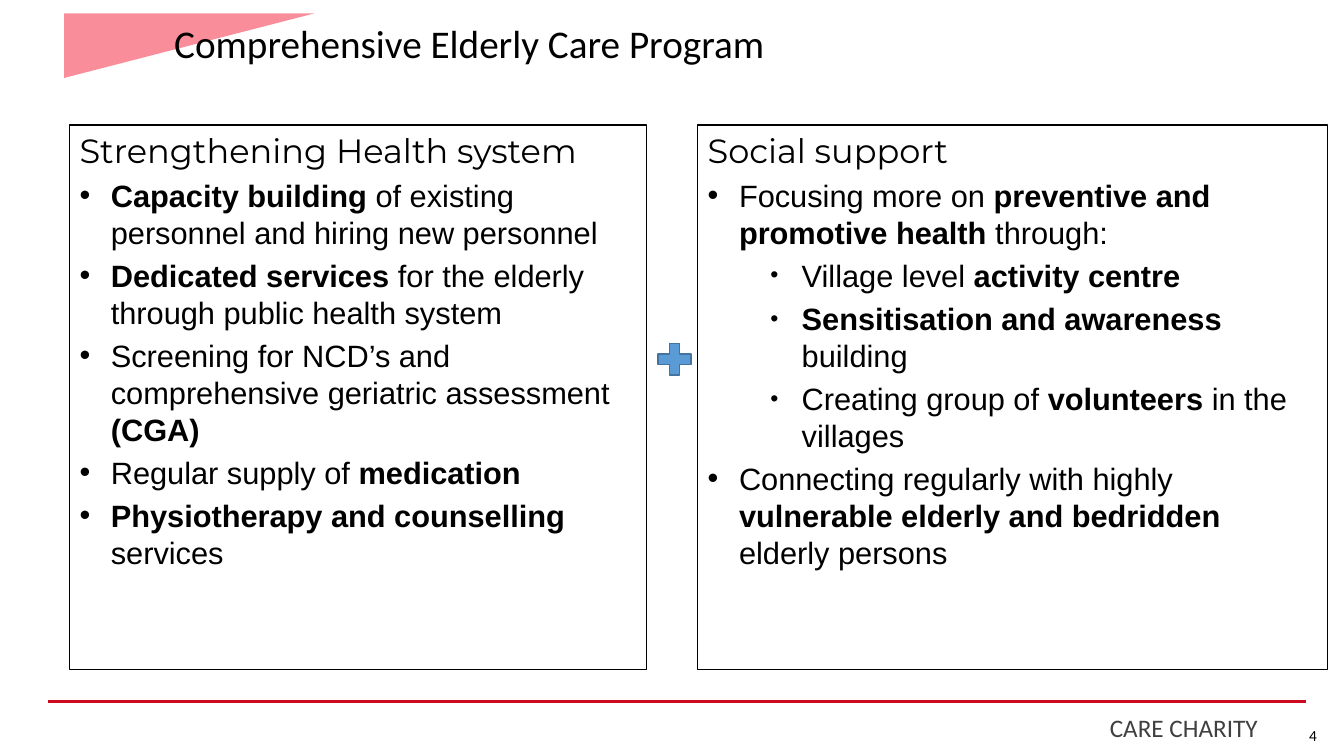
from dataclasses import dataclass

from lxml.etree import SubElement
from pptx import Presentation
from pptx.dml.color import RGBColor
from pptx.enum.shapes import MSO_CONNECTOR, MSO_SHAPE
from pptx.enum.text import MSO_ANCHOR, MSO_AUTO_SIZE, PP_ALIGN
from pptx.oxml.ns import qn
from pptx.util import Cm, Pt

BLACK = RGBColor(0x00, 0x00, 0x00)
GREY = RGBColor(0x40, 0x40, 0x40)
PINK = RGBColor(0xF9, 0x8E, 0x9A)
RED = RGBColor(0xCC, 0x0A, 0x20)
BLUE = RGBColor(0x5B, 0x9B, 0xD5)
NAVY = RGBColor(0x43, 0x73, 0x9E)
HANG = 0.79


@dataclass
class Item:
    text: str  # parts between asterisks are bold
    level: int = 0


@dataclass
class Panel:
    left: float
    width: float
    head: str
    items: list[Item]


@dataclass
class Label:
    text: str
    box: tuple[float, float, float, float]
    size: int
    color: RGBColor
    inset: tuple[float, float]


PANELS = [
    Panel(1.75, 14.55, "Strengthening Health system", [
        Item("*Capacity building *of existing personnel and hiring new personnel"),
        Item("*Dedicated services *for the elderly through public health system"),
        Item("Screening for NCD’s and comprehensive geriatric assessment *(CGA)*"),
        Item("Regular supply of *medication*"),
        Item("*Physiotherapy and counselling* services"),
    ]),
    Panel(17.58, 15.88, "Social support", [
        Item("Focusing more on *preventive and promotive health *through:"),
        Item("Village level *activity centre*", 1),
        Item("*Sensitisation and awareness *building", 1),
        Item("Creating group of *volunteers *in the villages", 1),
        Item("Connecting regularly with highly *vulnerable elderly and bedridden *elderly persons"),
    ]),
]
LABELS = [
    Label("CARE CHARITY", (27.84, 17.83, 5.13, 0.97), 18, GREY, (0.13, 0.13)),
    Label("4", (32.74, 18.16, 1.14, 1.02), 11, BLACK, (0.25, 0.13)),
]


def place(shape, left: float, top: float, width: float, height: float) -> None:
    shape.left, shape.top = Cm(left), Cm(top)
    shape.width, shape.height = Cm(width), Cm(height)


def style(run, name: str, size: float, color: RGBColor = BLACK, bold: bool = False) -> None:
    font = run.font
    font.name, font.size, font.bold = name, Pt(size), bold
    font.color.rgb = color


def indent(para, level: int) -> None:
    props = para._p.get_or_add_pPr()
    props.set("marL", str(Cm(HANG * (1 + 2 * level))))
    props.set("indent", str(-Cm(HANG)))
    SubElement(props, qn("a:buSzPct"), val="75000" if level else "100000")
    SubElement(props, qn("a:buFont"), typeface="Arial")
    SubElement(props, qn("a:buChar"), char="•")


def fill_panel(holder, panel: Panel) -> None:
    place(holder, panel.left, 3.15, panel.width, 13.72)
    holder.line.color.rgb = BLACK
    holder.line.width = Pt(0.75)
    frame = holder.text_frame
    frame.auto_size = MSO_AUTO_SIZE.NONE
    frame.text = panel.head
    head = frame.paragraphs[0]
    head.space_before = Pt(4.8)
    props = head._p.get_or_add_pPr()
    props.set("marL", "0")
    props.set("indent", "0")
    SubElement(props, qn("a:buNone"))
    style(head.runs[0], "Montserrat", 24)
    for item in panel.items:
        para = frame.add_paragraph()
        para.level = item.level
        para.line_spacing = Pt(26.4)
        para.space_before = Pt(4.4)
        indent(para, item.level)
        for i, part in enumerate(item.text.split("*")):
            if part:
                run = para.add_run()
                run.text = part
                style(run, "Arial", 22, bold=i % 2 == 1)


def add_label(slide, label: Label) -> None:
    shape = slide.shapes.add_textbox(*map(Cm, label.box))
    frame = shape.text_frame
    frame.word_wrap = True
    frame.margin_left = frame.margin_right = Cm(label.inset[0])
    frame.margin_top = frame.margin_bottom = Cm(label.inset[1])
    frame.text = label.text
    style(frame.paragraphs[0].runs[0], "Calibri", label.size, label.color)


def add_solid(slide, kind: MSO_SHAPE, box: tuple, color: RGBColor):
    shape = slide.shapes.add_shape(kind, *map(Cm, box))
    shape.shadow.inherit = False
    shape.fill.solid()
    shape.fill.fore_color.rgb = color
    shape.line.fill.background()
    return shape


def main() -> None:
    deck = Presentation()
    deck.slide_width, deck.slide_height = Cm(33.87), Cm(19.05)
    slide = deck.slides.add_slide(deck.slide_layouts[3])

    # Corner wedge, behind the title
    wedge = add_solid(slide, MSO_SHAPE.RIGHT_TRIANGLE, (3.96, -2.01, 1.63, 6.32), PINK)
    wedge.rotation = 90
    slide.shapes._spTree.insert(2, wedge._element)

    # Title
    title = slide.shapes.title
    place(title, 1.6, 0.25, 29.21, 1.83)
    frame = title.text_frame
    frame.auto_size = MSO_AUTO_SIZE.NONE
    frame.vertical_anchor = MSO_ANCHOR.MIDDLE
    frame.margin_left = Cm(2.79)
    frame.text = "Comprehensive Elderly Care Program"
    para = frame.paragraphs[0]
    para.alignment = PP_ALIGN.LEFT
    para.line_spacing = 0.9
    style(para.runs[0], "Calibri", 28)

    # Panels joined by a plus sign
    for spot, panel in enumerate(PANELS, 1):
        fill_panel(slide.placeholders[spot], panel)
    plus = add_solid(slide, MSO_SHAPE.MATH_PLUS, (16.43, 8.51, 1.14, 1.09), BLUE)
    plus.line.color.rgb = NAVY
    plus.line.width = Pt(1)

    # Footer
    rule = slide.shapes.add_connector(
        MSO_CONNECTOR.STRAIGHT, Cm(1.22), Cm(17.68), Cm(32.92), Cm(17.68))
    rule.line.color.rgb = RED
    rule.line.width = Pt(2.25)
    SubElement(rule._element.spPr, qn("a:effectLst"))
    for label in LABELS:
        add_label(slide, label)

    deck.save("out.pptx")


if __name__ == "__main__":
    main()
